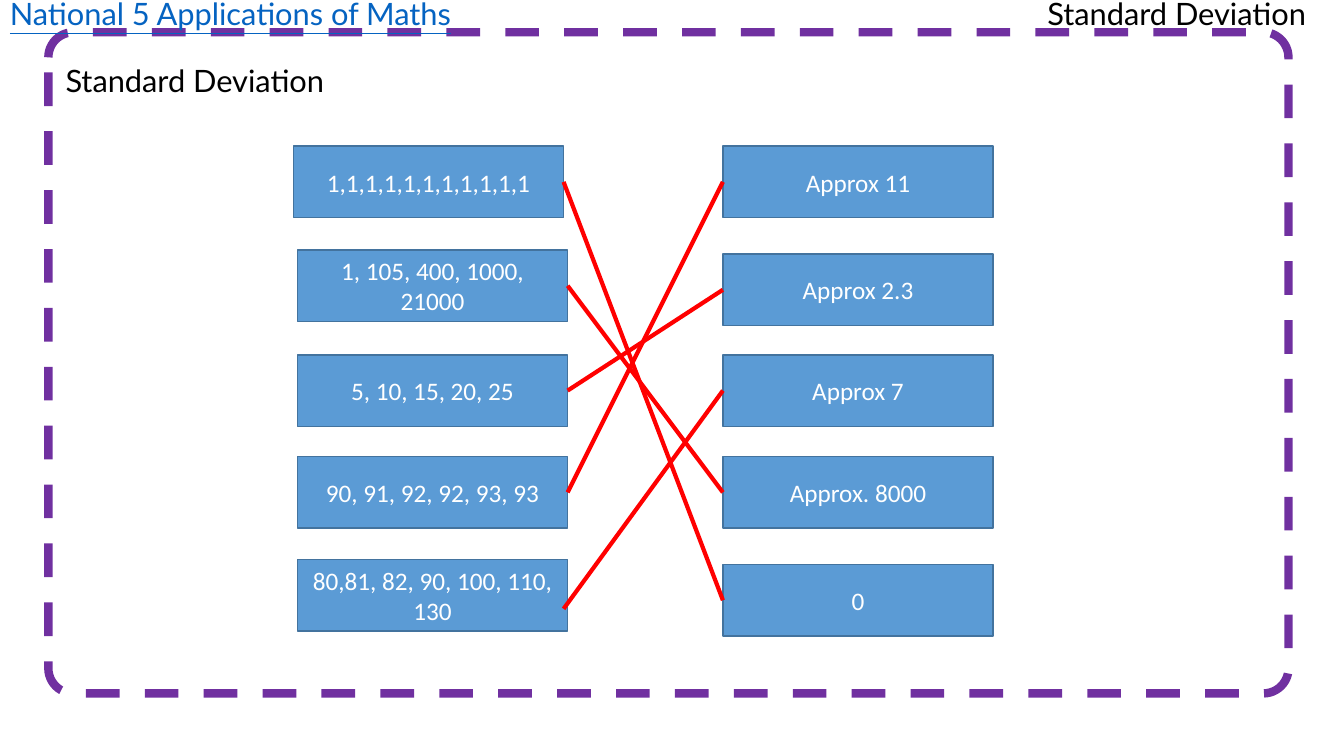
from dataclasses import dataclass

from lxml.etree import SubElement
from pptx import Presentation
from pptx.dml.color import RGBColor
from pptx.enum.dml import MSO_LINE
from pptx.enum.shapes import MSO_CONNECTOR, MSO_SHAPE
from pptx.enum.text import MSO_ANCHOR, MSO_AUTO_SIZE, PP_ALIGN
from pptx.oxml.ns import qn
from pptx.util import Inches, Pt


@dataclass(frozen=True)
class Theme:
    frame: str = "7030A0"
    heading: str = "000000"
    course: str = "0563C1"
    card: str = "5B9BD5"
    card_edge: str = "43739E"
    card_text: str = "FFFFFF"
    match: str = "FF0000"
    heading_font: str = "Lato"
    card_font: str = "Calibri"
    heading_size: int = 22
    card_size: int = 18


THEME = Theme()
RIGHT, LEFT = 3, 1
HEADING_SIZE = (2.82, 0.47)
CARD_SIZE = (2.68, 0.71)

# Each card: text, left offset and top offset within the exercise box
DATA_SETS = [
    ("1,1,1,1,1,1,1,1,1,1,1", 0, 0),
    ("1, 105, 400, 1000, 21000", 0.04, 1.03),
    ("5, 10, 15, 20, 25", 0.04, 2.07),
    ("90, 91, 92, 92, 93, 93", 0.04, 3.08),
    ("80,81, 82, 90, 100, 110, 130", 0.04, 4.1),
]
DEVIATIONS = [
    ("Approx 11", 4.26, 0),
    ("Approx 2.3", 4.26, 1.07),
    ("Approx 7", 4.26, 2.07),
    ("Approx. 8000", 4.26, 3.08),
    ("0", 4.26, 4.15),
]
# Data set index -> deviation index
MATCHES = {0: 4, 1: 3, 2: 1, 3: 0, 4: 2}
# Matches that leave their card away from the middle of its side
LOOSE_STARTS = {4: (2.68, 4.59)}


def rgb(value):
    return RGBColor.from_string(value)


def write(shape, text, *, font, size, color, align=PP_ALIGN.LEFT,
          anchor=MSO_ANCHOR.TOP, underline=None, wrap=True):
    frame = shape.text_frame
    frame.word_wrap = wrap
    frame.auto_size = MSO_AUTO_SIZE.NONE if wrap else MSO_AUTO_SIZE.SHAPE_TO_FIT_TEXT
    frame.vertical_anchor = anchor
    paragraph = frame.paragraphs[0]
    paragraph.alignment = align
    run = paragraph.add_run()
    run.text = text
    run.font.name = font
    run.font.size = Pt(size)
    run.font.color.rgb = rgb(color)
    run.font.underline = underline


def style_line(line, color, width):
    line.color.rgb = rgb(color)
    line.width = Pt(width)


def write_heading(shape, text, color=THEME.heading, underline=None):
    write(shape, text, font=THEME.heading_font, size=THEME.heading_size,
          color=color, underline=underline, wrap=False)


def add_frame(slide, left, top, width, height):
    frame = slide.shapes.add_shape(MSO_SHAPE.ROUNDED_RECTANGLE, Inches(left), Inches(top),
                                   Inches(width), Inches(height))
    frame.adjustments[0] = 0.038
    frame.shadow.inherit = False
    frame.fill.background()
    style_line(frame.line, THEME.frame, 6)
    frame.line.dash_style = MSO_LINE.DASH


def add_header(slide, left, top, width):
    """Course name at the left end, topic at the right end."""
    topic_width, height = HEADING_SIZE
    topic = slide.shapes.add_textbox(Inches(left + width - topic_width), Inches(top),
                                     Inches(topic_width), Inches(height))
    write_heading(topic, "Standard Deviation")
    course = slide.shapes.add_textbox(Inches(left), Inches(top), Inches(4.63), Inches(height))
    write_heading(course, "National 5 Applications of Maths", THEME.course, underline=True)


def place_title(slide, left, top):
    title = slide.shapes.title
    title.left, title.top = Inches(left), Inches(top)
    title.width, title.height = map(Inches, HEADING_SIZE)
    write_heading(title, "Standard Deviation")


def add_card(slide, text, left, top):
    card = slide.shapes.add_shape(MSO_SHAPE.RECTANGLE, Inches(left), Inches(top),
                                  *map(Inches, CARD_SIZE))
    card.shadow.inherit = False
    card.fill.solid()
    card.fill.fore_color.rgb = rgb(THEME.card)
    style_line(card.line, THEME.card_edge, 1)
    write(card, text, font=THEME.card_font, size=THEME.card_size, color=THEME.card_text,
          align=PP_ALIGN.CENTER, anchor=MSO_ANCHOR.MIDDLE)
    return card


def add_matching_exercise(slide, left, top):
    data_cards, deviation_cards = (
        [add_card(slide, text, left + dx, top + dy) for text, dx, dy in column]
        for column in (DATA_SETS, DEVIATIONS)
    )
    for data_index, deviation_index in MATCHES.items():
        dx, dy = LOOSE_STARTS.get(data_index, (0, 0))
        start = Inches(left + dx), Inches(top + dy)
        match = slide.shapes.add_connector(MSO_CONNECTOR.STRAIGHT, *start, *start)
        if data_index not in LOOSE_STARTS:
            match.begin_connect(data_cards[data_index], RIGHT)
        match.end_connect(deviation_cards[deviation_index], LEFT)
        style_line(match.line, THEME.match, 3)
        SubElement(match._element.spPr, qn("a:effectLst"))


def main():
    presentation = Presentation()
    presentation.slide_width = Inches(13.33)
    presentation.slide_height = Inches(7.5)
    slide = presentation.slides.add_slide(presentation.slide_layouts[5])
    add_frame(slide, 0.48, 0.32, 12.3, 6.56)
    add_header(slide, 0, -0.1, 13.11)
    place_title(slide, 0.55, 0.56)
    add_matching_exercise(slide, 2.91, 1.45)
    presentation.save("out.pptx")


if __name__ == "__main__":
    main()
